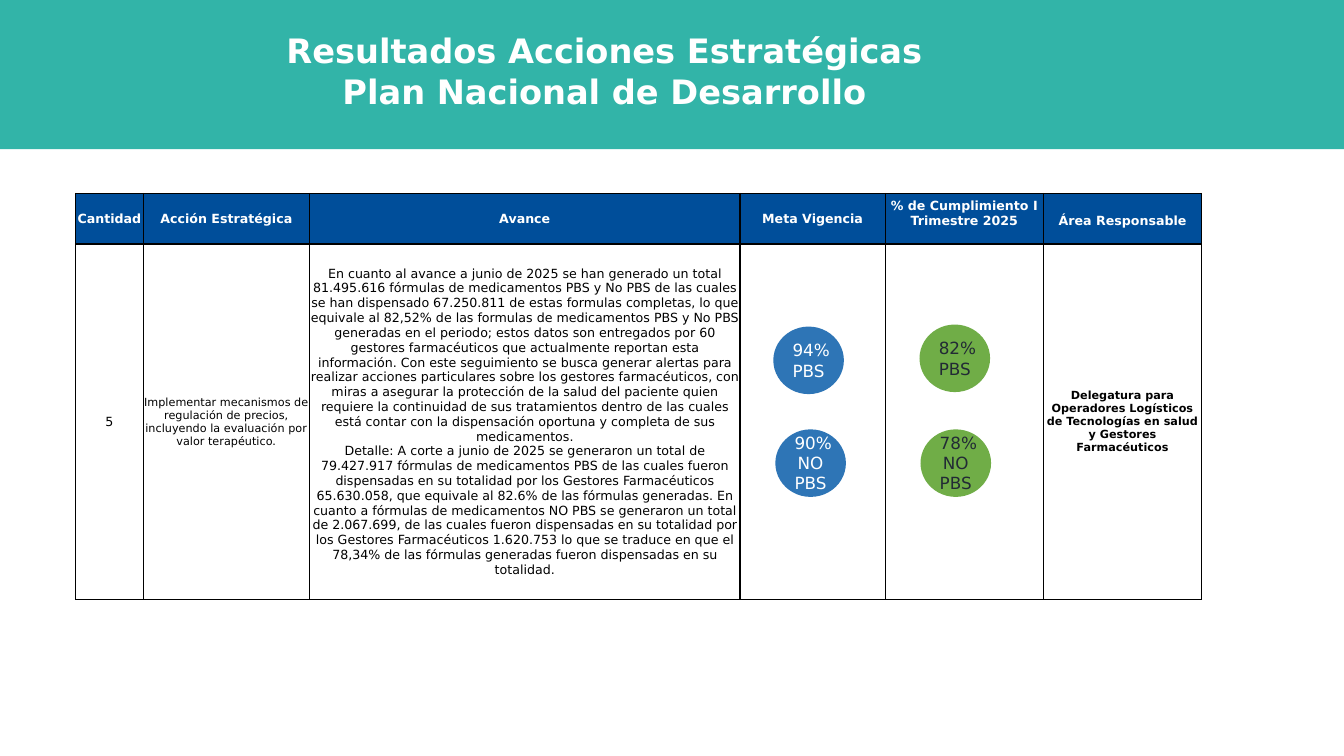
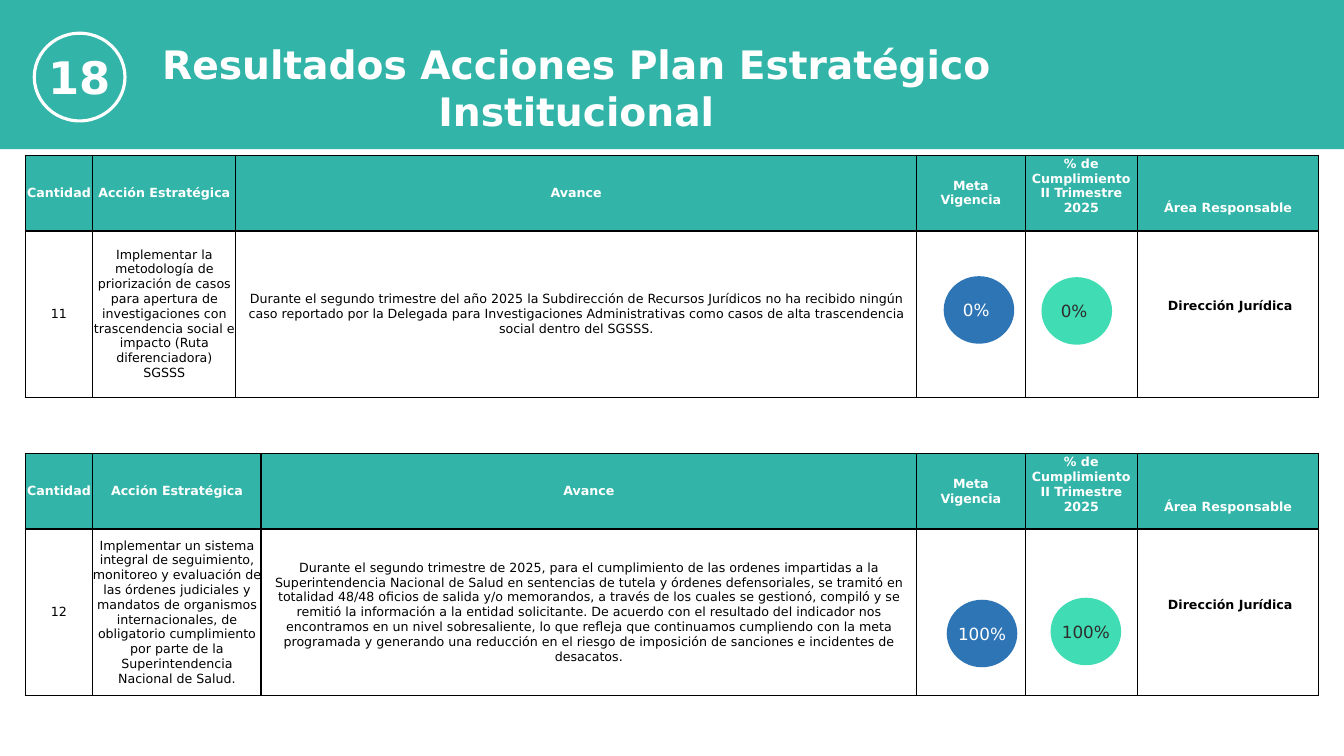
import pptx
import pptx.util
import pptx.dml.color
import pptx.enum.shapes
import pptx.enum.text
import pptx.oxml
import pptx.oxml.ns

Inches = pptx.util.Inches
Pt = pptx.util.Pt
RGBColor = pptx.dml.color.RGBColor
Anchor = pptx.enum.text.MSO_ANCHOR
OVAL = pptx.enum.shapes.MSO_SHAPE.OVAL

TEAL = RGBColor(0x32, 0xB4, 0xA8)
NAVY = RGBColor(0x00, 0x4E, 0x9A)
BLUE = RGBColor(0x2E, 0x75, 0xB6)
GREEN = RGBColor(0x70, 0xAD, 0x47)
MINT = RGBColor(0x40, 0xDC, 0xB3)
SLATE = RGBColor(0x22, 0x2A, 0x35)
DARK = RGBColor(0x2D, 0x2D, 0x2D)
BLACK = RGBColor(0, 0, 0)
WHITE = RGBColor(0xFF, 0xFF, 0xFF)

FONT = "DejaVu Sans"
FLAT = dict(margin_left=0, margin_right=0, margin_top=0, margin_bottom=0)
GAP = Inches(0.15)


def write(frame, text, hue, size, bold=False):
    frame.text = text
    form = dict(name=FONT, size=Pt(size), bold=bold)
    for para in frame.paragraphs:
        para.alignment = pptx.enum.text.PP_ALIGN.CENTER
        for run in para.runs:
            for key, val in form.items():
                setattr(run.font, key, val)
            run.font.color.rgb = hue


def disc(slide, box, text, hue, size, bold=False):
    shape = slide.shapes.add_shape(OVAL, *[Inches(n) for n in box])
    shape.shadow.inherit = False
    shape.fill.background()
    shape.line.fill.background()
    frame = shape.text_frame
    form = dict(FLAT, word_wrap=True, vertical_anchor=Anchor.MIDDLE)
    for key, val in form.items():
        setattr(frame, key, val)
    write(frame, text, hue, size, bold)
    return shape


deck = pptx.Presentation()
deck.slide_width = Inches(13.33)
deck.slide_height = Inches(7.5)
plain = deck.slide_layouts.get_by_name("Title Only")

heads = [
    ("Resultados Acciones Estratégicas Plan Nacional de Desarrollo",
     (2.58, 0.25, 6.83, 0.91), 24),
    ("Resultados Acciones Plan Estratégico Institucional",
     (1.38, 0.35, 8.67, 1.04), 28),
]
slides = []
for text, box, size in heads:
    slide = deck.slides.add_slide(plain)
    title = slide.shapes.title
    for key, val in zip(("left", "top", "width", "height"), box):
        setattr(title, key, Inches(val))
    form = dict(word_wrap=True, vertical_anchor=Anchor.TOP,
                auto_size=pptx.enum.text.MSO_AUTO_SIZE.NONE)
    for key, val in form.items():
        setattr(title.text_frame, key, val)
    write(title.text_frame, text, WHITE, size, True)
    slides.append(slide)
first, second = slides

band = first.shapes.add_shape(
    pptx.enum.shapes.MSO_SHAPE.RECTANGLE, 0, 0, deck.slide_width, Inches(1.48))
band.shadow.inherit = False
band.fill.solid()
band.fill.fore_color.rgb = TEAL
band.line.fill.background()
deck.slide_master.shapes.element.insert(2, band.element)

total = (
    "En cuanto al avance a junio de 2025 se han generado un total 81.495.616 "
    "fórmulas de medicamentos PBS y No PBS de las cuales se han dispensado "
    "67.250.811 de estas formulas completas, lo que equivale al 82,52% de las "
    "formulas de medicamentos PBS y No PBS generadas en el periodo; estos datos "
    "son entregados por 60 gestores farmacéuticos que actualmente reportan esta "
    "información. Con este seguimiento se busca generar alertas para realizar "
    "acciones particulares sobre los gestores farmacéuticos, con miras a asegurar "
    "la protección de la salud del paciente quien requiere la continuidad de sus "
    "tratamientos dentro de las cuales está contar con la dispensación oportuna y "
    "completa de sus medicamentos."
)
detail = (
    "Detalle: A corte a junio de 2025 se generaron un total de 79.427.917 "
    "fórmulas de medicamentos PBS de las cuales fueron dispensadas en su totalidad "
    "por los Gestores Farmacéuticos 65.630.058, que equivale al 82.6% de las "
    "fórmulas generadas. En cuanto a fórmulas de medicamentos NO PBS se generaron "
    "un total de 2.067.699, de las cuales fueron dispensadas en su totalidad por "
    "los Gestores Farmacéuticos 1.620.753 lo que se traduce en que el 78,34% de "
    "las fórmulas generadas fueron dispensadas en su totalidad."
)
cases = (
    "Durante el segundo trimestre del año 2025 la Subdirección de Recursos "
    "Jurídicos no ha recibido ningún caso reportado por la Delegada para "
    "Investigaciones Administrativas como casos de alta trascendencia social "
    "dentro del SGSSS."
)
orders = (
    "Durante el segundo trimestre de 2025, para el cumplimiento de las ordenes "
    "impartidas a la Superintendencia Nacional de Salud en sentencias de tutela y "
    "órdenes defensoriales, se tramitó en totalidad 48/48 oficios de salida y/o "
    "memorandos, a través de los cuales se gestionó, compiló y se remitió la "
    "información a la entidad solicitante. De acuerdo con el resultado del "
    "indicador nos encontramos en un nivel sobresaliente, lo que refleja que "
    "continuamos cumpliendo con la meta programada y generando una reducción en "
    "el riesgo de imposición de sanciones e incidentes de desacatos."
)

tables = [
    dict(slide=first, at=(0.75, 1.92), cols=(0.67, 1.65, 4.27, 1.44, 1.57, 1.57),
         rows=(0.5, 3.53), hue=NAVY, goal="Meta Vigencia", term="I",
         sizes=(9, 8, 9, 9, 9, 8), foot=0,
         body=("5",
               "Implementar mecanismos de regulación de precios, incluyendo la "
               "evaluación por valor terapéutico.",
               "\n".join((total, detail)), "", "",
               "Delegatura para Operadores Logísticos de Tecnologías en salud y "
               "Gestores Farmacéuticos")),
    dict(slide=second, at=(0.25, 1.54), cols=(0.67, 1.42, 6.75, 1.08, 1.11, 1.8),
         rows=(0.75, 1.65), hue=TEAL, goal="Meta\vVigencia", term="II",
         sizes=(9,) * 6, foot=GAP,
         body=("11",
               "Implementar la metodología de priorización de casos para apertura "
               "de investigaciones con trascendencia social e impacto (Ruta "
               "diferenciadora)\nSGSSS",
               cases, "", "", " Dirección Jurídica")),
    dict(slide=second, at=(0.25, 4.5), cols=(0.67, 1.67, 6.5, 1.08, 1.11, 1.8),
         rows=(0.75, 1.65), hue=TEAL, goal="Meta\vVigencia", term="II",
         sizes=(9,) * 6, foot=GAP,
         body=("12",
               "Implementar un sistema integral de seguimiento, monitoreo y "
               "evaluación de las órdenes judiciales y mandatos de organismos "
               "internacionales, de obligatorio cumplimiento por parte de la "
               "Superintendencia Nacional de Salud.",
               orders, "", "", " Dirección Jurídica")),
]

for item in tables:
    cols, rows = item["cols"], item["rows"]
    left, top = item["at"]
    grid = item["slide"].shapes.add_table(
        2, 6, Inches(left), Inches(top), Inches(sum(cols)), Inches(sum(rows))).table
    grid.first_row = False
    grid.horz_banding = False
    for col, width in zip(grid.columns, cols):
        col.width = Inches(width)
    for row, height in zip(grid.rows, rows):
        row.height = Inches(height)
    names = ("Cantidad", "Acción Estratégica", "Avance", item["goal"],
             f"% de Cumplimiento {item['term']} Trimestre 2025", "Área Responsable")
    for r, texts in enumerate((names, item["body"])):
        for c, text in enumerate(texts):
            cell = grid.cell(r, c)
            form = dict(FLAT, vertical_anchor=Anchor.MIDDLE)
            if r == 0 and c > 3:
                form.update(vertical_anchor=Anchor.BOTTOM, margin_bottom=GAP)
            elif r == 1 and c == 5:
                form["margin_bottom"] = item["foot"]
            for key, val in form.items():
                setattr(cell, key, val)
            thick = "B" if r == 0 else "T"
            for side in "LRTB":
                wide = Pt(2 if side == thick else 1)
                cell._tc.get_or_add_tcPr().append(pptx.oxml.parse_xml(
                    f'<a:ln{side} {pptx.oxml.ns.nsdecls("a")} w="{wide}">'
                    f'<a:solidFill><a:srgbClr val="{BLACK}"/></a:solidFill>'
                    f'</a:ln{side}>'))
            if r == 0:
                cell.fill.solid()
                cell.fill.fore_color.rgb = item["hue"]
                write(cell.text_frame, text, WHITE, 9, True)
            else:
                cell.fill.background()
                write(cell.text_frame, text, BLACK, item["sizes"][c], c == 5)

marks = [
    (first, 7.67, 3.24, " 94% PBS", BLUE, WHITE),
    (first, 9.12, 3.22, " 82% PBS", GREEN, SLATE),
    (first, 7.69, 4.26, " 90% NO PBS", BLUE, WHITE),
    (first, 9.13, 4.26, " 78% NO PBS", GREEN, SLATE),
    (second, 9.36, 2.74, "0% ", BLUE, WHITE),
    (second, 10.33, 2.75, "0% ", MINT, DARK),
    (second, 9.39, 5.95, "100% ", BLUE, WHITE),
    (second, 10.42, 5.93, "100% ", MINT, DARK),
]
for slide, left, top, text, hue, ink in marks:
    dot = disc(slide, (left, top, 0.7, 0.67), text, ink, 12)
    dot.fill.solid()
    dot.fill.fore_color.rgb = hue

badge = disc(second, (0.34, 0.33, 0.9, 0.87), "18", WHITE, 32, True)
badge.text_frame.word_wrap = False
badge.line.color.rgb = WHITE
badge.line.width = Pt(2.25)

deck.save("out.pptx")
